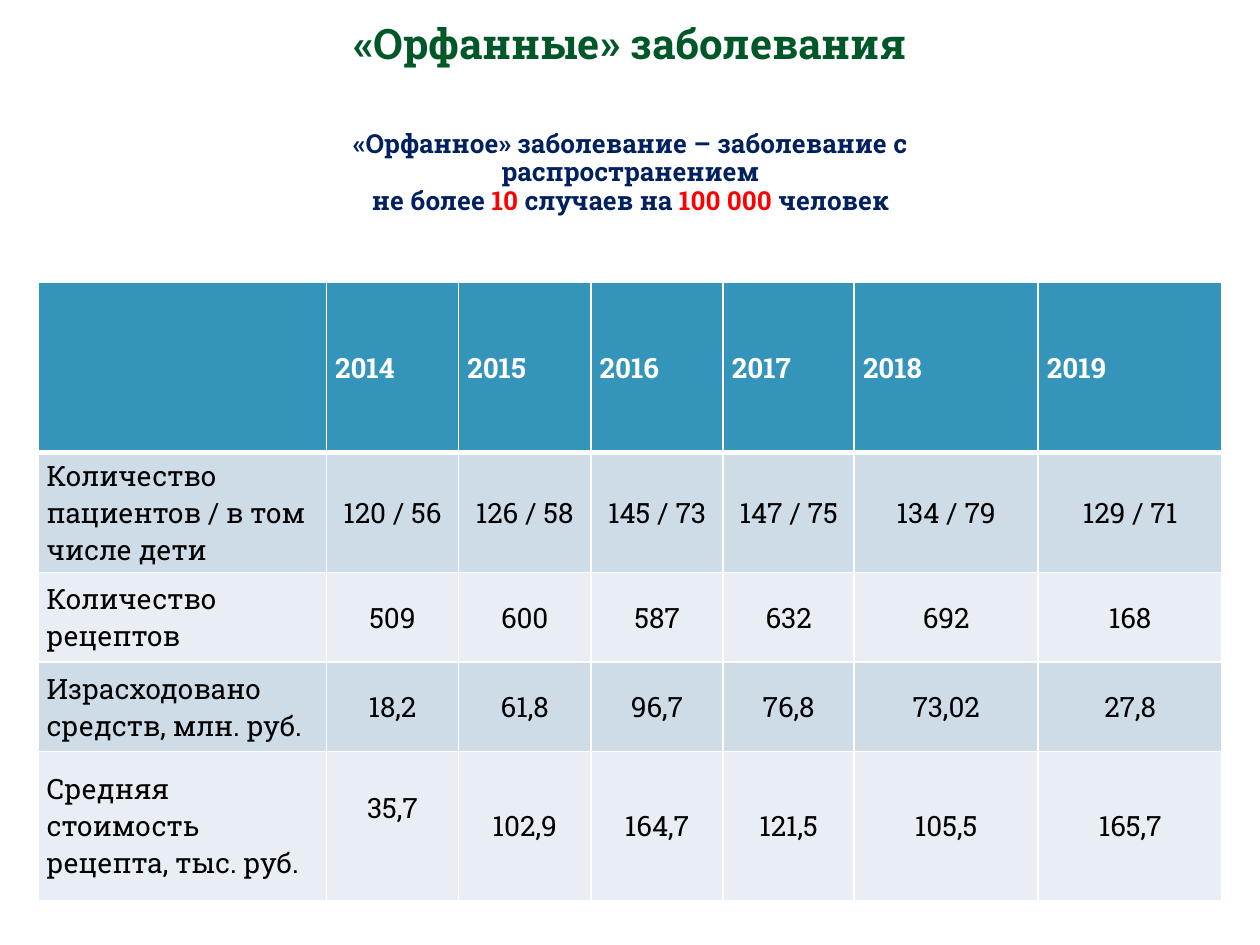
from lxml import etree
from pptx import Presentation
from pptx.dml.color import RGBColor
from pptx.enum.text import MSO_ANCHOR, PP_ALIGN
from pptx.oxml.ns import qn
from pptx.util import Inches, Pt

MIDDLE = MSO_ANCHOR.MIDDLE
LEFT, CENTER = PP_ALIGN.LEFT, PP_ALIGN.CENTER
FACE = "Roboto Slab"
COLORS = {
    "title": "005828", "navy": "002060", "red": "FF0000",
    "head": "3494BA", "dark": "CEDCE7", "light": "E8EEF3",
    "white": "FFFFFF", "black": "000000",
}
WIDTHS = [2.29, 1.05, 1.05, 1.05, 1.04, 1.46, 1.46]
HEIGHTS = [1.35, 0.94, 0.71, 0.71, 1.18]
ROWS = [
    ["", "2014", "2015", "2016", "2017", "2018", "2019"],
    ["Количество пациентов / в том числе дети", "120 / 56", "126 / 58",
     "145 / 73", "147 / 75", "134 / 79", "129 / 71"],
    ["Количество рецептов", "509", "600", "587", "632", "692", "168"],
    ["Израсходовано средств, млн. руб.", "18,2", "61,8", "96,7", "76,8",
     "73,02", "27,8"],
    ["Средняя стоимость рецепта, тыс. руб.", "35,7", "102,9", "164,7",
     "121,5", "105,5", "165,7"],
]
NOTE = [
    [("«Орфанное» заболевание – заболевание с распространением", "navy")],
    [("не более ", "navy"), ("10", "red"), (" случаев на ", "navy"),
     ("100 000 ", "red"), ("человек", "navy")],
]


def style(font, size, color, bold):
    font.name = FACE
    font.size = Pt(size)
    font.bold = bold
    font.color.rgb = RGBColor.from_string(COLORS[color])


def add_title(slide):
    title = slide.shapes.title
    title.left, title.top = Inches(0.28), Inches(0.08)
    title.width, title.height = Inches(9.45), Inches(0.52)
    frame = title.text_frame
    frame.text = "«Орфанные» заболевания"
    frame.vertical_anchor = MIDDLE
    para = frame.paragraphs[0]
    para.alignment = CENTER
    style(para.runs[0].font, 24, "title", True)


def add_note(slide):
    box = slide.shapes.add_textbox(
        Inches(1.83), Inches(0.99), Inches(6.35), Inches(0.86))
    frame = box.text_frame
    frame.word_wrap = True
    for i, parts in enumerate(NOTE):
        para = frame.add_paragraph() if i else frame.paragraphs[0]
        para.alignment = CENTER
        para.line_spacing = 0.9
        for text, color in parts:
            run = para.add_run()
            run.text = text
            style(run.font, 15, color, True)


def set_border(cell, top, bottom):
    """Draw white cell edges; top and bottom are widths in points."""
    props = cell._tc.get_or_add_tcPr()
    edges = [("a:lnL", 1), ("a:lnR", 1), ("a:lnT", top), ("a:lnB", bottom)]
    for i, (tag, width) in enumerate(edges):
        line = etree.Element(qn(tag), w=str(Pt(width)))
        fill = etree.SubElement(line, qn("a:solidFill"))
        etree.SubElement(fill, qn("a:srgbClr"), val=COLORS["white"])
        props.insert(i, line)


def fill_cell(cell, text, row, col):
    head = row == 0
    cell.vertical_anchor = MIDDLE
    cell.margin_left = cell.margin_right = Inches(0.07)
    cell.margin_top = cell.margin_bottom = Inches(0.04)
    shade = "head" if head else "dark" if row % 2 else "light"
    cell.fill.solid()
    cell.fill.fore_color.rgb = RGBColor.from_string(COLORS[shade])
    set_border(cell, 3 if row == 1 else 1, 3 if head else 1)
    para = cell.text_frame.paragraphs[0]
    para.text = text
    para.alignment = LEFT if head or col == 0 else CENTER
    style(para.font, 16, "white" if head else "black", head)
    for run in para.runs:
        style(run.font, 16, "white" if head else "black", head)


def add_grid(slide):
    table = slide.shapes.add_table(
        len(ROWS), len(WIDTHS), Inches(0.3), Inches(2.24),
        Inches(sum(WIDTHS)), Inches(sum(HEIGHTS))).table
    for col, width in zip(table.columns, WIDTHS):
        col.width = Inches(width)
    for row, height in zip(table.rows, HEIGHTS):
        row.height = Inches(height)
    for r, texts in enumerate(ROWS):
        for c, text in enumerate(texts):
            fill_cell(table.cell(r, c), text, r, c)
    # The first average cost sits above the middle of its row
    table.cell(4, 1).margin_bottom = Inches(0.33)


def main():
    deck = Presentation()
    deck.slide_width, deck.slide_height = Inches(10), Inches(7.5)
    slide = deck.slides.add_slide(deck.slide_layouts[5])
    add_title(slide)
    add_grid(slide)
    add_note(slide)
    deck.save("out.pptx")


if __name__ == "__main__":
    main()
